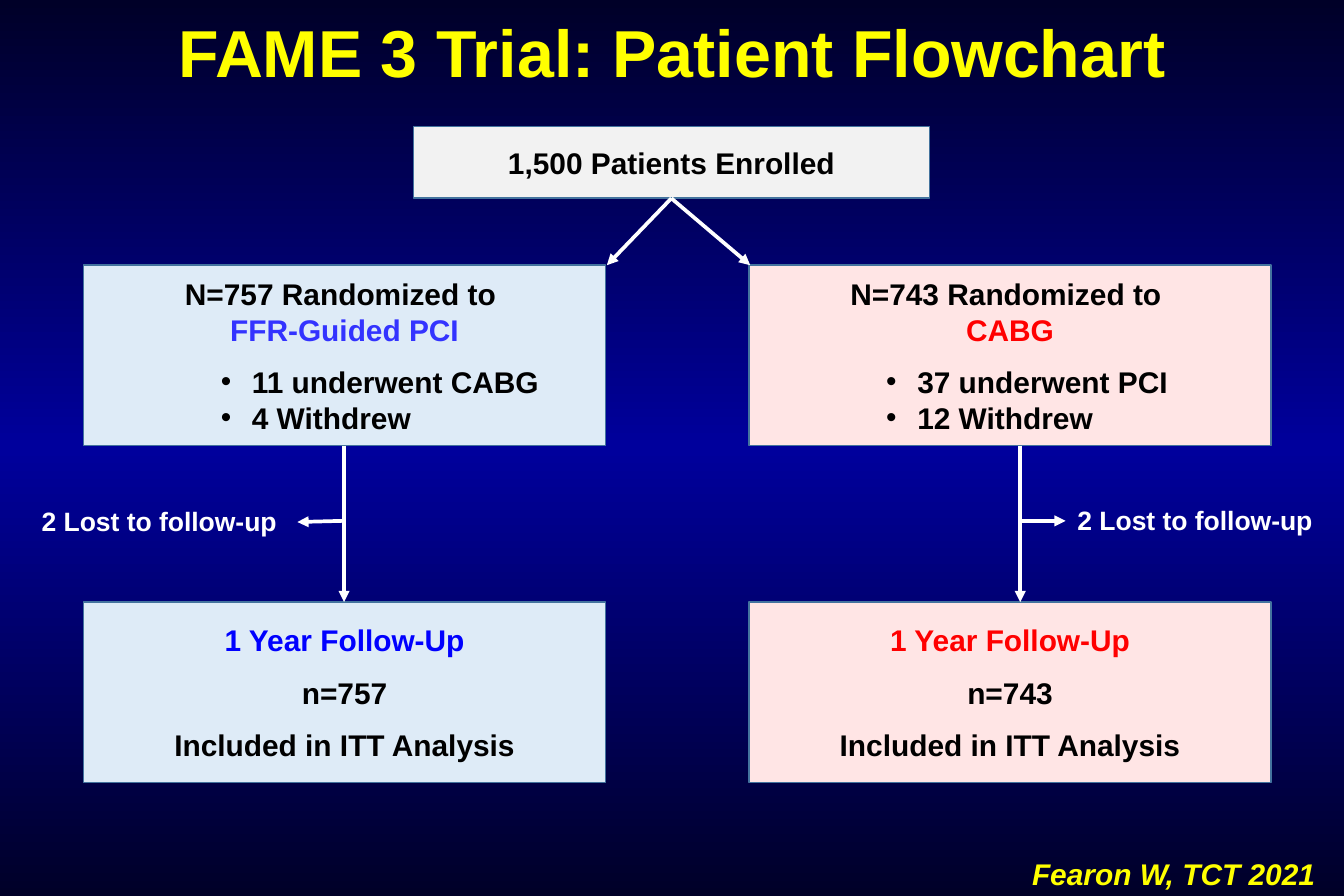
from copy import deepcopy

from lxml import etree
from pptx import Presentation
from pptx.dml.color import RGBColor
from pptx.enum import shapes, text
from pptx.oxml.ns import qn
from pptx.util import Inches, Pt

NAVY = RGBColor(0x00, 0x00, 0x28)
ROYAL = RGBColor(0x00, 0x00, 0x9C)
YELLOW = RGBColor(0xFF, 0xFF, 0x00)
WHITE = RGBColor(0xFF, 0xFF, 0xFF)
BLACK = RGBColor(0x00, 0x00, 0x00)
GREY = RGBColor(0xF2, 0xF2, 0xF2)
PALE_BLUE = RGBColor(0xDE, 0xEB, 0xF7)
PALE_RED = RGBColor(0xFF, 0xE5, 0xE5)
BORDER = RGBColor(0x43, 0x73, 0x9E)
PCI_BLUE = RGBColor(0x33, 0x33, 0xFF)
BLUE = RGBColor(0x00, 0x00, 0xFF)
RED = RGBColor(0xFF, 0x00, 0x00)

CENTER, LEFT = text.PP_ALIGN.CENTER, text.PP_ALIGN.LEFT
GAP = 10


def write(tf, lines, size=18, align=CENTER, italic=False):
    """Write (words, colour, points before, bulleted) lines as paragraphs."""
    tf.word_wrap = True
    for i, (words, color, before, bulleted) in enumerate(lines):
        p = tf.add_paragraph() if i else tf.paragraphs[0]
        p.alignment = LEFT if bulleted else align
        p.space_before = Pt(before)
        if bulleted:
            pPr = p._p.get_or_add_pPr()
            pPr.set("marL", str(Inches(1.31)))
            pPr.set("indent", str(Inches(-0.26)))
            etree.SubElement(pPr, qn("a:buFont")).set("typeface", "Arial")
            etree.SubElement(pPr, qn("a:buChar")).set("char", "•")
        r = p.add_run()
        r.text = words
        r.font.name, r.font.size = "Arial", Pt(size)
        r.font.bold, r.font.italic = True, italic
        r.font.color.rgb = color


def add_box(x, y, w, h, fill, lines):
    sp = s.shapes.add_shape(shapes.MSO_SHAPE.RECTANGLE, Inches(x), Inches(y), Inches(w), Inches(h))
    sp.shadow.inherit = False
    sp.fill.solid()
    sp.fill.fore_color.rgb = fill
    sp.line.color.rgb = BORDER
    sp.line.width = Pt(1)
    sp.text_frame.vertical_anchor = text.MSO_ANCHOR.MIDDLE
    write(sp.text_frame, lines)


prs = Presentation()
prs.slide_width, prs.slide_height = Inches(11.25), Inches(7.5)
s = prs.slides.add_slide(prs.slide_layouts[5])

# Background: navy to royal blue and back
fill = s.background.fill
fill.gradient()
fill.gradient_angle = 270
first = fill.gradient_stops[0]._gs
first.addnext(deepcopy(first))
for stop, color, position in zip(fill.gradient_stops, (NAVY, ROYAL, NAVY), (0, 0.5, 1)):
    stop.color.rgb = color
    stop.position = position

# Title
title = s.shapes.title
title.left, title.top, title.width, title.height = Inches(0), Inches(0.04), Inches(11.25), Inches(0.77)
title.text_frame.auto_size = text.MSO_AUTO_SIZE.NONE
title.text_frame.vertical_anchor = text.MSO_ANCHOR.MIDDLE
write(title.text_frame, [("FAME 3 Trial: Patient Flowchart", YELLOW, 0, False)], size=40)

# Enrolment and the two arms
add_box(3.46, 1.06, 4.32, 0.6, GREY, [("1,500 Patients Enrolled", BLACK, 0, False)])
arms = [
    (0.7, PALE_BLUE, "757", "FFR-Guided PCI", PCI_BLUE, "11 underwent CABG", "4 Withdrew", BLUE),
    (6.27, PALE_RED, "743", "CABG", RED, "37 underwent PCI", "12 Withdrew", RED),
]
for x, tint, count, therapy, therapy_color, crossover, withdrew, follow_color in arms:
    add_box(x, 2.22, 4.37, 1.51, tint, [
        (f"N={count} Randomized to ", BLACK, 0, False),
        (therapy, therapy_color, 0, False),
        (crossover, BLACK, GAP, True),
        (withdrew, BLACK, 0, True),
    ])
    add_box(x, 5.04, 4.37, 1.51, tint, [
        ("1 Year Follow-Up", follow_color, 0, False),
        (f"n={count}", BLACK, GAP, False),
        ("Included in ITT Analysis", BLACK, GAP, False),
    ])

# Free labels
labels = [
    (0.25, 4.18, 2.25, 0.37, "2 Lost to follow-up", WHITE, 16, False),
    (8.92, 4.17, 2.25, 0.37, "2 Lost to follow-up", WHITE, 16, False),
    (8.54, 7.11, 2.71, 0.4, "Fearon W, TCT 2021", YELLOW, 18, True),
]
for x, y, w, h, words, color, size, italic in labels:
    tb = s.shapes.add_textbox(Inches(x), Inches(y), Inches(w), Inches(h))
    write(tb.text_frame, [(words, color, 0, False)], size, LEFT, italic)

# Arrows
arrows = [
    (5.62, 1.66, 5.08, 2.22),
    (5.62, 1.66, 6.28, 2.22),
    (2.88, 3.73, 2.88, 5.04),
    (8.54, 3.73, 8.54, 5.04),
    (2.87, 4.36, 2.49, 4.37),
    (8.54, 4.36, 8.92, 4.36),
]
for ends in arrows:
    arrow = s.shapes.add_connector(shapes.MSO_CONNECTOR.STRAIGHT, *map(Inches, ends))
    arrow.line.color.rgb = WHITE
    arrow.line.width = Pt(2.25)
    etree.SubElement(arrow.line._get_or_add_ln(), qn("a:tailEnd")).set("type", "triangle")
    etree.SubElement(arrow._element.spPr, qn("a:effectLst"))

prs.save("out.pptx")
